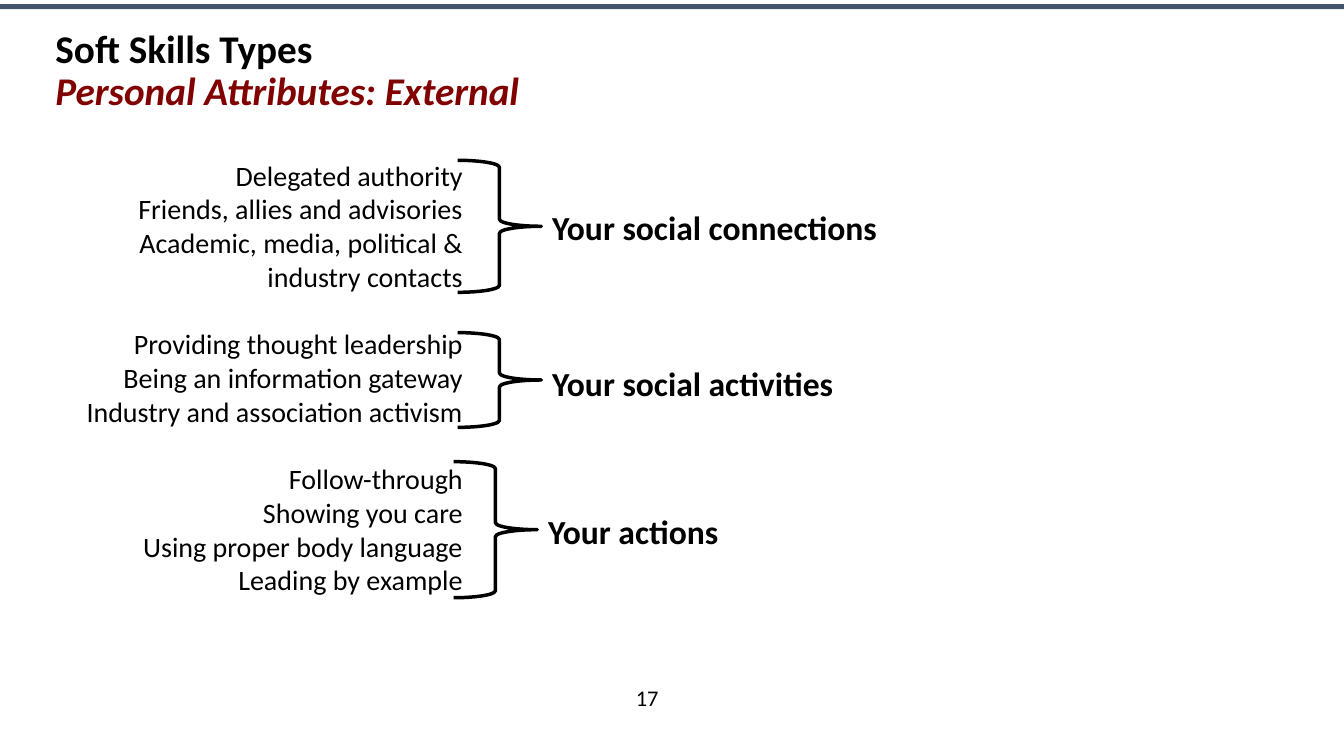
from dataclasses import dataclass

from pptx import Presentation
from pptx.dml.color import RGBColor as Rgb
from pptx.enum.shapes import MSO_SHAPE as Shape
from pptx.enum.text import MSO_ANCHOR as Anchor, PP_ALIGN as Align
from pptx.util import Inches, Pt

COLUMNS, ROWS = 40, 30
WIDTH, HEIGHT = Inches(13.33), Inches(7.5)


@dataclass(frozen=True)
class Theme:
    font: str = "Calibri"
    ink: str = "000000"
    accent: str = "810000"
    bar: str = "44546A"
    title: float = 28
    label: float = 24
    body: float = 20
    number: float = 16
    brace_line: float = 2.5
    group_gap: float = 24.4


@dataclass(frozen=True)
class Box:
    left: float
    top: float
    width: float
    height: float

    def frame(self):
        column, row = WIDTH / COLUMNS, HEIGHT / ROWS
        return (round(self.left * column), round(self.top * row),
                round(self.width * column), round(self.height * row))


@dataclass(frozen=True)
class Group:
    label: str
    items: tuple
    brace: Box
    label_drop: float


THEME = Theme()
GROUPS = (
    Group("Your social connections",
          ("Delegated authority", "Friends, allies and advisories",
           "Academic, media, political & industry contacts"),
          Box(13.62, 6.36, 2.49, 5.24), 0.02),
    Group("Your social activities",
          ("Providing thought leadership", "Being an information gateway",
           "Industry and association activism"),
          Box(13.62, 13.2, 2.49, 3.76), 0.12),
    Group("Your actions",
          ("Follow-through", "Showing you care",
           "Using proper body language", "Leading by example"),
          Box(13.5, 18.32, 2.49, 5.4), 0.06),
)


def style(font, size, color=THEME.ink, bold=False, italic=False):
    font.name = THEME.font
    font.size = Pt(size)
    font.bold = bold
    font.italic = italic
    font.color.rgb = Rgb.from_string(color)


def add_text(page, box, lines, size, align=Align.LEFT, bold=False, anchor=Anchor.TOP):
    frame = page.shapes.add_textbox(*box.frame()).text_frame
    frame.word_wrap = True
    frame.vertical_anchor = anchor
    frame.text = "\n".join(lines)
    for para in frame.paragraphs:
        para.alignment = align
        for span in para.runs:
            style(span.font, size, bold=bold)
    return frame


def add_bar(page, box):
    bar = page.shapes.add_shape(Shape.RECTANGLE, *box.frame())
    bar.shadow.inherit = False
    bar.fill.solid()
    bar.fill.fore_color.rgb = Rgb.from_string(THEME.bar)
    bar.line.fill.background()


def add_title(page, box):
    title = page.shapes.title
    title.left, title.top, title.width, title.height = box.frame()
    frame = title.text_frame
    frame.text = "Soft Skills Types\vPersonal Attributes: External"
    frame.vertical_anchor = Anchor.TOP
    para = frame.paragraphs[0]
    para.alignment = Align.LEFT
    para.line_spacing = 0.9
    heading, subheading = para.runs
    style(heading.font, THEME.title, bold=True)
    style(subheading.font, THEME.title, THEME.accent, bold=True, italic=True)


def add_items(page, box):
    lines = [item for group in GROUPS for item in group.items]
    frame = add_text(page, box, lines, THEME.body, Align.RIGHT)
    first_items = [group.items[0] for group in GROUPS[1:]]
    for para in frame.paragraphs:
        if para.text in first_items:
            para.space_before = Pt(THEME.group_gap)


def add_group_label(page, group):
    box = group.brace
    brace = page.shapes.add_shape(Shape.RIGHT_BRACE, *box.frame())
    brace.shadow.inherit = False
    brace.fill.background()
    brace.line.color.rgb = Rgb.from_string(THEME.ink)
    brace.line.width = Pt(THEME.brace_line)
    label_height = 2
    label_top = box.top + (box.height - label_height) / 2 + group.label_drop
    label_box = Box(box.left + box.width + 0.03, label_top, 19.38, label_height)
    add_text(page, label_box, [group.label], THEME.label, bold=True)


def build_attributes_page(deck):
    page = deck.slides.add_slide(deck.slide_layouts[5])
    add_bar(page, Box(0, 0.16, COLUMNS, 0.2))
    add_text(page, Box(18.15, 26.88, 2.22, 1.6), ["17"], THEME.number,
             Align.CENTER, anchor=Anchor.MIDDLE)
    add_title(page, Box(1.35, 0.96, 35.85, 3.76))
    add_items(page, Box(1.02, 6.08, 13.05, 19.6))
    for group in GROUPS:
        add_group_label(page, group)


def main():
    deck = Presentation()
    deck.slide_width, deck.slide_height = WIDTH, HEIGHT
    build_attributes_page(deck)
    deck.save("out.pptx")


if __name__ == "__main__":
    main()
